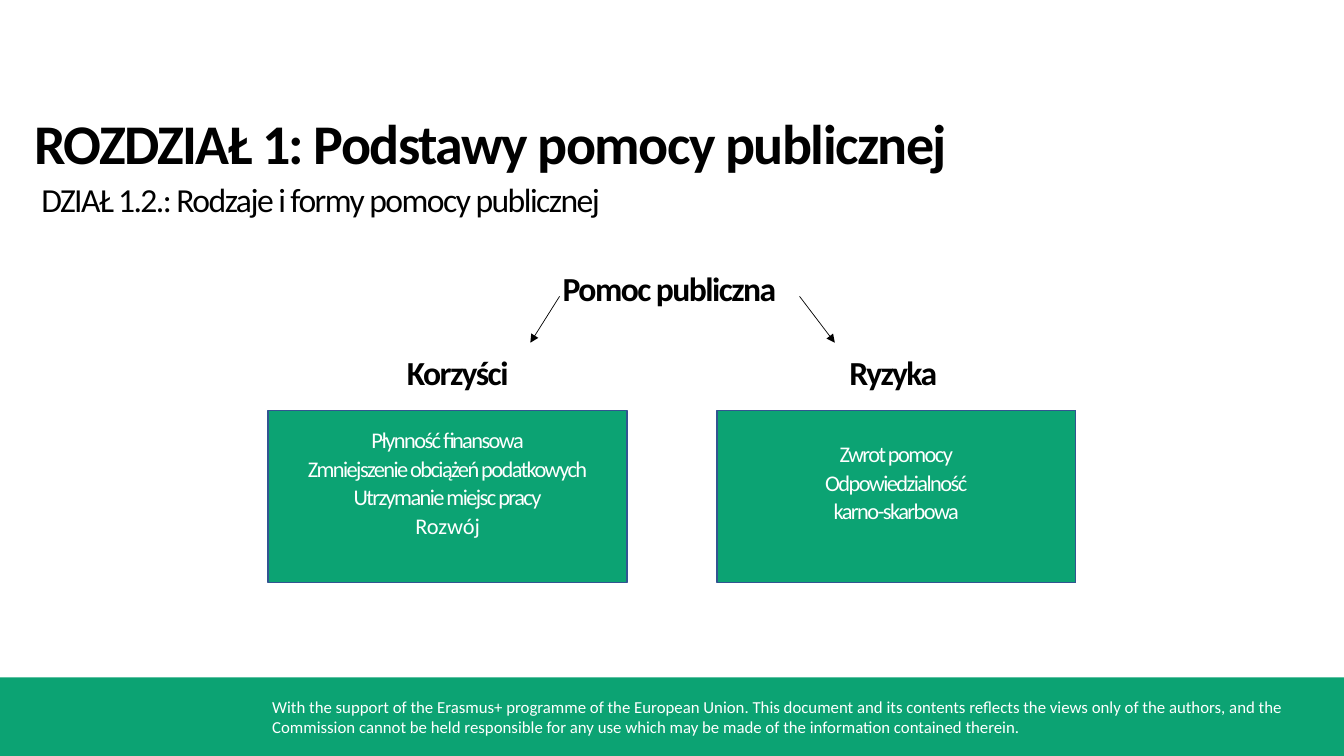
from dataclasses import dataclass

from lxml import etree
from pptx import Presentation
from pptx.dml.color import RGBColor
from pptx.enum.shapes import MSO_CONNECTOR, MSO_SHAPE
from pptx.enum.text import MSO_ANCHOR, MSO_AUTO_SIZE, PP_ALIGN
from pptx.oxml.ns import qn
from pptx.util import Inches, Pt

LEFT, CENTER = PP_ALIGN.LEFT, PP_ALIGN.CENTER
TOP, MIDDLE = MSO_ANCHOR.TOP, MSO_ANCHOR.MIDDLE

# Content
TITLE = "ROZDZIAŁ 1: Podstawy pomocy publicznej"
SUBTITLE = "DZIAŁ 1.2.: Rodzaje i formy pomocy publicznej"
ROOT = "Pomoc publiczna"
BRANCHES = [
    # heading, heading centre, text inset, arrow start and end, lines with tracking
    ("Korzyści", 4.54, 0.16, 5.55, 5.26,
     [("Płynność finansowa", True), ("Zmniejszenie obciążeń podatkowych", True),
      ("Utrzymanie miejsc pracy", True), ("Rozwój", False)]),
    ("Ryzyka", 8.86, 0.3, 7.93, 8.28,
     [("Zwrot pomocy", True), ("Odpowiedzialność", True), ("karno-skarbowa", True)]),
]
FOOTER = ("With the support of the Erasmus+ programme of the European Union. "
          "This document and its contents reflects the views only of the authors, and the "
          "Commission cannot be held responsible for any use which may be made of the "
          "information contained therein.")


@dataclass(frozen=True)
class Theme:
    font: str = "Calibri"
    green: RGBColor = RGBColor(0x0C, 0xA3, 0x73)
    outline: RGBColor = RGBColor(0x32, 0x54, 0x91)
    black: RGBColor = RGBColor(0, 0, 0)
    white: RGBColor = RGBColor(0xFF, 0xFF, 0xFF)
    title: int = 40
    heading: int = 24
    item: int = 16
    footer: int = 12
    tracking: float = -1.1


T = Theme()

# Layout, in inches
W, H = 13.33, 7.5
BAR_TOP = 6.72
BOX_W, BOX_H, BOX_TOP = 3.56, 1.71, 4.07
BOX_LEFT, BOX_STEP = 2.66, 4.45
HEAD_W, HEAD_H = 3, 0.41
ROOT_CENTER, ROOT_TOP, HEAD_TOP = 6.64, 2.66, 3.49
ARROW_TOP, ARROW_END = 2.94, 3.4


def write(sp, lines, size, color, bold=False, align=LEFT, anchor=TOP, insets=(0, 0, 0, 0)):
    """Fill a shape with (text, tracked) lines."""
    tf = sp.text_frame
    tf.word_wrap = True
    tf.auto_size = MSO_AUTO_SIZE.NONE
    tf.vertical_anchor = anchor
    tf.margin_left, tf.margin_top, tf.margin_right, tf.margin_bottom = map(Inches, insets)
    for i, (text, tracked) in enumerate(lines):
        p = tf.add_paragraph() if i else tf.paragraphs[0]
        p.alignment = align
        p.space_before = Pt(1.1 if i else 0)
        r = p.add_run()
        r.text = text
        r.font.name, r.font.size, r.font.bold = T.font, Pt(size), bold
        r.font.color.rgb = color
        if tracked:
            r._r.get_or_add_rPr().set("spc", str(round(T.tracking * 100)))


def add_label(s, text, x, y, w, **style):
    sp = s.shapes.add_textbox(Inches(x), Inches(y), Inches(w), Inches(HEAD_H))
    write(sp, [(text, True)], T.heading, T.black, **style)


def add_panel(s, kind, x, y, w, h):
    sp = s.shapes.add_shape(kind, Inches(x), Inches(y), Inches(w), Inches(h))
    sp.shadow.inherit = False
    sp.fill.solid()
    sp.fill.fore_color.rgb = T.green
    return sp


def add_arrow(s, x1, y1, x2, y2):
    cx = s.shapes.add_connector(MSO_CONNECTOR.STRAIGHT, *map(Inches, (x1, y1, x2, y2)))
    cx.line.color.rgb = T.black
    cx.line.width = Pt(0.5)
    etree.SubElement(cx.line._get_or_add_ln(), qn("a:tailEnd"), type="triangle")
    etree.SubElement(cx._element.spPr, qn("a:effectLst"))


def main():
    prs = Presentation()
    prs.slide_width, prs.slide_height = Inches(W), Inches(H)
    s = prs.slides.add_slide(prs.slide_layouts[5])

    # Footer band
    bar = add_panel(s, MSO_SHAPE.RECTANGLE, 0, BAR_TOP, W, H - BAR_TOP)
    bar.line.fill.background()
    write(bar, [(FOOTER, False)], T.footer, T.white, anchor=MIDDLE, insets=(2.7, 0, 0.41, 0))

    # Title and section
    title = s.shapes.title
    title.left, title.top, title.width, title.height = map(Inches, (0.34, 1.08, 12.5, 0.68))
    write(title, [(TITLE, True)], T.title, T.black, bold=True)
    add_label(s, SUBTITLE, 0.41, 1.77, 12)

    # Tree: root, arrows, headings and panels
    add_label(s, ROOT, ROOT_CENTER - HEAD_W / 2, ROOT_TOP, HEAD_W, bold=True, align=CENTER)
    for col, (heading, center, inset, x1, x2, lines) in enumerate(BRANCHES):
        add_label(s, heading, center - HEAD_W / 2, HEAD_TOP, HEAD_W, bold=True, align=CENTER)
        box = add_panel(s, MSO_SHAPE.FLOWCHART_PROCESS,
                        BOX_LEFT + col * BOX_STEP, BOX_TOP, BOX_W, BOX_H)
        box.line.color.rgb = T.outline
        box.line.width = Pt(1)
        write(box, lines, T.item, T.white, align=CENTER, insets=(0.1, inset, 0.1, 0))
        add_arrow(s, x1, ARROW_TOP, x2, ARROW_END)

    prs.save("out.pptx")


if __name__ == "__main__":
    main()
